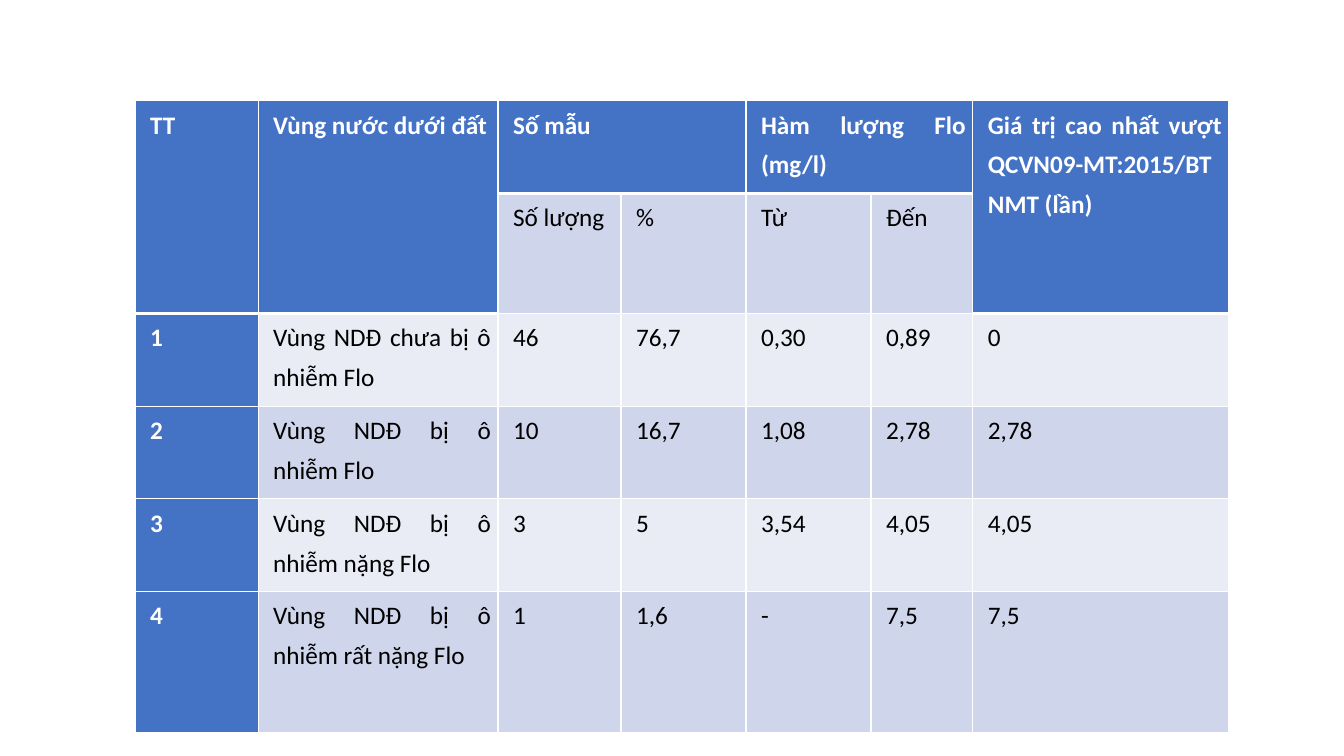
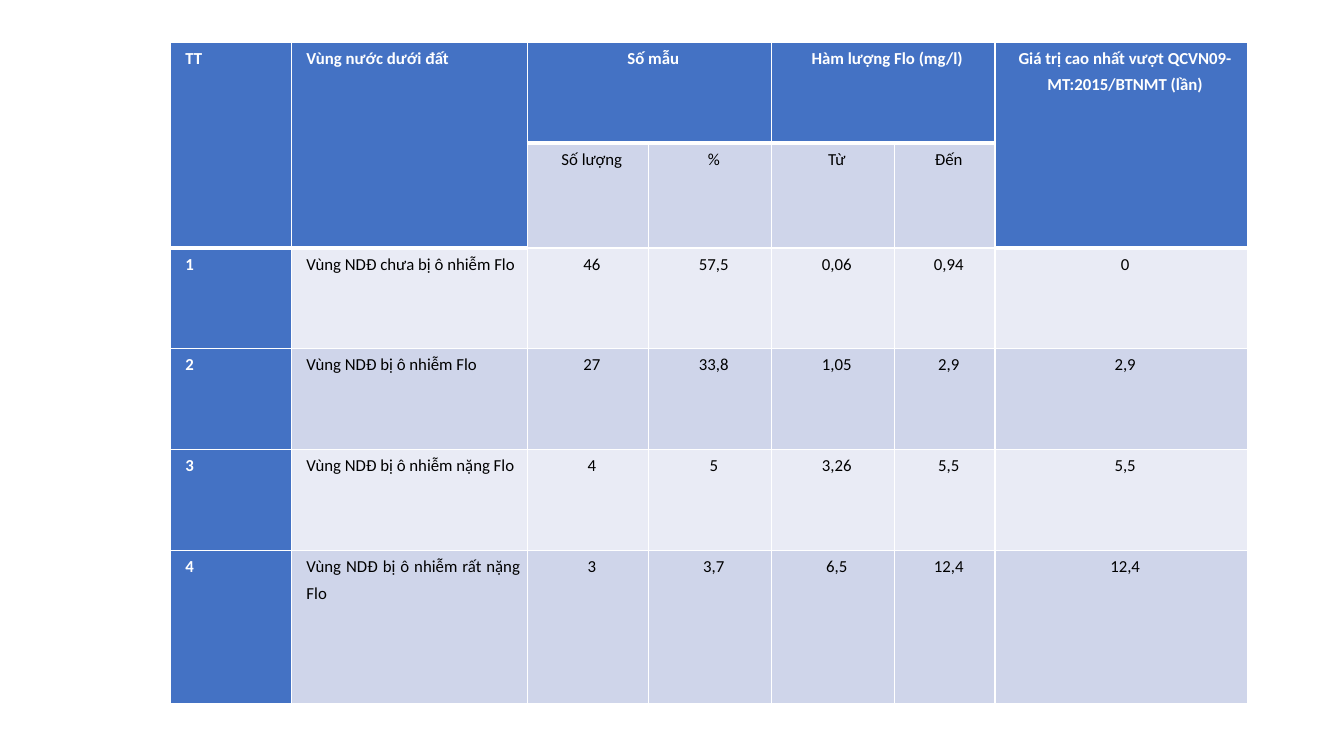
from dataclasses import dataclass

from lxml.etree import SubElement as Sub
from pptx import Presentation
from pptx.dml.color import RGBColor as RGB
from pptx.enum.text import PP_ALIGN as Align
from pptx.oxml.ns import qn
from pptx.util import Inches, Pt


@dataclass(frozen=True)
class Theme:
    font: str = "Calibri"
    blue: str = "4472C4"
    bands: tuple = ("E9EBF5", "CFD5EA")
    white: str = "FFFFFF"
    black: str = "000000"
    large: int = 18
    small: int = 12
    thin: int = 1
    thick: int = 3


LOOK = Theme()
CELL = {
    "margin_left": Inches(0.07),
    "margin_right": Inches(0.07),
    "margin_top": 0,
    "margin_bottom": 0,
}
PARA = {"line_spacing": 1.3, "space_after": Pt(6)}
INDENT = Inches(0.08)

HEAD = [
    ["TT", "Vùng nước dưới đất", "Số mẫu", "", "Hàm lượng Flo (mg/l)", "",
     "Giá trị cao nhất vượt QCVN09-MT:2015/BTNMT (lần)"],
    ["", "", "Số lượng", "%", "Từ", "Đến", ""],
]
ZONES = ["chưa bị ô nhiễm Flo", "bị ô nhiễm Flo",
         "bị ô nhiễm nặng Flo", "bị ô nhiễm rất nặng Flo"]
TALL = (0, 1, 6)
WIDE = (2, 4)


def is_head(row, col):
    return row == 0 or (row == 1 and col in TALL)


def edge(cell, row, col):
    """Draw white borders, thick along the lower side of the header."""
    under = row > 0 and is_head(row - 1, col)
    sides = {
        "L": LOOK.thin,
        "R": LOOK.thin,
        "T": LOOK.thick if under else LOOK.thin,
        "B": LOOK.thick if is_head(row, col) else LOOK.thin,
    }
    props = cell._tc.get_or_add_tcPr()
    for side, width in sides.items():
        line = Sub(props, qn(f"a:ln{side}"), w=str(Pt(width)))
        fill = Sub(line, qn("a:solidFill"))
        Sub(fill, qn("a:srgbClr"), val=LOOK.white)


def write(cell, text, size, align, strong):
    para = cell.text_frame.paragraphs[0]
    para.text = text
    para._p.get_or_add_pPr().set("marL", str(INDENT))
    for name, value in {**PARA, "alignment": align}.items():
        setattr(para, name, value)
    font = {"name": LOOK.font, "size": Pt(size), "bold": strong}
    for name, value in font.items():
        setattr(para.font, name, value)
    shade = LOOK.white if strong else LOOK.black
    para.font.color.rgb = RGB.from_string(shade)


def grid(slide, box, cols, rows, data, size, align):
    """Place a table in box; align applies to the columns after the zone."""
    frame = slide.shapes.add_table(len(rows), len(cols), *map(Inches, box))
    table = frame.table
    table.first_row = table.horz_banding = False
    for col, width in zip(table.columns, cols):
        col.width = Inches(width)
    for row, height in zip(table.rows, rows):
        row.height = Inches(height)
    for col in TALL:
        table.cell(0, col).merge(table.cell(1, col))
    for col in WIDE:
        table.cell(0, col).merge(table.cell(0, col + 1))

    body = [[str(num), f"Vùng NDĐ {zone}", *vals]
            for num, (zone, vals) in enumerate(zip(ZONES, data), 1)]
    for r, line in enumerate(HEAD + body):
        for c, text in enumerate(line):
            cell = table.cell(r, c)
            strong = c == 0 or is_head(r, c)
            for name, value in CELL.items():
                setattr(cell, name, value)
            edge(cell, r, c)
            cell.fill.solid()
            shade = LOOK.blue if strong else LOOK.bands[r % 2]
            cell.fill.fore_color.rgb = RGB.from_string(shade)
            if not cell.is_spanned:
                side = align if c > 1 else Align.JUSTIFY
                write(cell, text, size, side, strong)


PAGES = [
    {
        "box": (1.34, 1, 10.85, 6.04),
        "cols": (1.22, 2.38, 1.22, 1.24, 1.24, 1.01, 2.54),
        "rows": (0.92, 0.96, 0.92, 0.92, 0.92, 1.4),
        "size": LOOK.large,
        "align": Align.JUSTIFY,
        "data": [
            ("46", "76,7", "0,30", "0,89", "0"),
            ("10", "16,7", "1,08", "2,78", "2,78"),
            ("3", "5", "3,54", "4,05", "4,05"),
            ("1", "1,6", "-", "7,5", "7,5"),
        ],
    },
    {
        "box": (1.69, 0.42, 10.68, 6.56),
        "cols": (1.2, 2.34, 1.2, 1.22, 1.22, 1, 2.5),
        "rows": (1, 1.04, 1, 1, 1, 1.52),
        "size": LOOK.small,
        "align": Align.CENTER,
        "data": [
            ("46", "57,5", "0,06", "0,94", "0"),
            ("27", "33,8", "1,05", "2,9", "2,9"),
            ("4", "5", "3,26", "5,5", "5,5"),
            ("3", "3,7", "6,5", "12,4", "12,4"),
        ],
    },
]


def main():
    deck = Presentation()
    deck.slide_width, deck.slide_height = Inches(13.33), Inches(7.5)
    for page in PAGES:
        grid(deck.slides.add_slide(deck.slide_layouts[6]), **page)
    deck.save("out.pptx")


if __name__ == "__main__":
    main()
